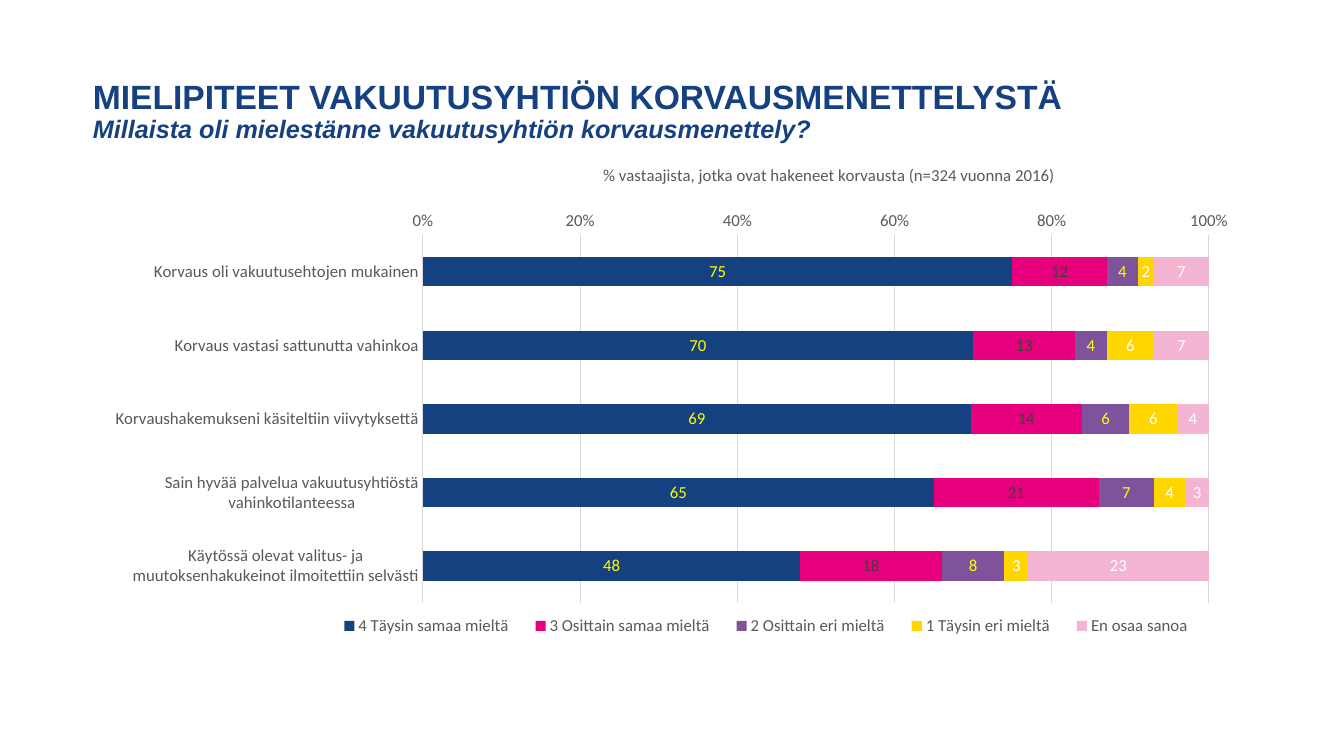
from dataclasses import dataclass

import lxml.etree
import pptx
import pptx.chart.data
import pptx.dml.color
import pptx.enum.chart
import pptx.enum.text
import pptx.oxml.ns
import pptx.util

PX_PER_INCH = 100.8
NAVY, GREY, GRID = "164180", "595959", "D9D9D9"


@dataclass(frozen=True)
class Box:
    left: int
    top: int
    width: int
    height: int

    def emu(self) -> list[pptx.util.Emu]:
        return [px(n) for n in (self.left, self.top, self.width, self.height)]


@dataclass(frozen=True)
class Answer:
    name: str
    shares: tuple[int, ...]
    fill: str
    label: str


@dataclass(frozen=True)
class Heading:
    text: str
    size: int
    italic: bool


HEADINGS = (
    Heading("MIELIPITEET VAKUUTUSYHTIÖN KORVAUSMENETTELYSTÄ", 24, False),
    Heading("Millaista oli mielestänne vakuutusyhtiön korvausmenettely?", 18, True),
)
STATEMENTS = (
    "Korvaus oli vakuutusehtojen mukainen",
    "Korvaus vastasi sattunutta vahinkoa",
    "Korvaushakemukseni käsiteltiin viivytyksettä",
    "Sain hyvää palvelua vakuutusyhtiöstä vahinkotilanteessa",
    "Käytössä olevat valitus- ja muutoksenhakukeinot ilmoitettiin selvästi",
)
ANSWERS = (
    Answer("4 Täysin samaa mieltä", (75, 70, 69, 65, 48), NAVY, "FFFF00"),
    Answer("3 Osittain samaa mieltä", (12, 13, 14, 21, 18), "E6007E", "404040"),
    Answer("2 Osittain eri mieltä", (4, 4, 6, 7, 8), "7F539C", "FFFF00"),
    Answer("1 Täysin eri mieltä", (2, 6, 6, 4, 3), "FFD600", "FFFFFF"),
    Answer("En osaa sanoa", (7, 7, 4, 3, 23), "F4B5D3", "FFFFFF"),
)
CHART_TITLE = "% vastaajista, jotka ovat hakeneet korvausta (n=324 vuonna 2016)"

HEADING_BOX = Box(83, 39, 1159, 147)
CHART_BOX = Box(93, 156, 1159, 492)
TITLE_BOX = Box(600, 161, 465, 26)
PLOT_BOX = Box(423, 235, 786, 368)
LEGEND_BOX = Box(323, 612, 886, 28)


def px(length: int) -> pptx.util.Emu:
    return pptx.util.Inches(length / PX_PER_INCH)


def rgb(value: str) -> pptx.dml.color.RGBColor:
    return pptx.dml.color.RGBColor.from_string(value)


def style_font(font, color: str, size: int = 12, name: str = "Calibri", bold: bool = False) -> None:
    font.name, font.size, font.bold = name, pptx.util.Pt(size), bold
    font.color.rgb = rgb(color)


def style_line(line) -> None:
    line.color.rgb = rgb(GRID)
    line.width = pptx.util.Pt(0.75)


def place(part, index: int, box: Box, sized: bool = True, inner: bool = False) -> None:
    """Give a chart part a manual layout, as shares of the chart's box."""
    qn = pptx.oxml.ns.qn
    for old in part.findall(qn("c:layout")):
        part.remove(old)
    layout = lxml.etree.Element(qn("c:layout"))
    manual = lxml.etree.SubElement(layout, qn("c:manualLayout"))
    settings = {"layoutTarget": "inner"} if inner else {}
    settings |= {
        "xMode": "edge",
        "yMode": "edge",
        "x": (box.left - CHART_BOX.left) / CHART_BOX.width,
        "y": (box.top - CHART_BOX.top) / CHART_BOX.height,
    }
    if sized:
        settings |= {"w": box.width / CHART_BOX.width, "h": box.height / CHART_BOX.height}
    for tag, value in settings.items():
        lxml.etree.SubElement(manual, qn(f"c:{tag}")).set("val", str(value))
    part.insert(index, layout)


def add_heading(slide) -> None:
    frame = slide.shapes.add_textbox(*HEADING_BOX.emu()).text_frame
    frame.word_wrap = True
    frame.vertical_anchor = pptx.enum.text.MSO_ANCHOR.MIDDLE
    paragraph = frame.paragraphs[0]
    paragraph.line_spacing = 0.9
    for number, heading in enumerate(HEADINGS):
        if number:
            paragraph.add_line_break()
        run = paragraph.add_run()
        run.text = heading.text
        style_font(run.font, NAVY, heading.size, "Arial", True)
        run.font.italic = heading.italic


def style_axes(chart) -> None:
    for axis in (chart.category_axis, chart.value_axis):
        axis.major_tick_mark = axis.minor_tick_mark = pptx.enum.chart.XL_TICK_MARK.NONE
        style_font(axis.tick_labels.font, GREY)
    chart.category_axis.reverse_order = True
    style_line(chart.category_axis.format.line)

    shares = chart.value_axis
    shares.minimum_scale, shares.maximum_scale, shares.major_unit = 0, 1, 0.2
    shares.tick_labels.number_format = "0%"
    shares.tick_labels.number_format_is_linked = False
    shares.format.line.fill.background()
    shares.has_major_gridlines = True
    style_line(shares.major_gridlines.format.line)


def style_answers(plot) -> None:
    plot.gap_width, plot.overlap = 150, 100
    plot.vary_by_categories = False
    for series, answer in zip(plot.series, ANSWERS):
        series.format.fill.solid()
        series.format.fill.fore_color.rgb = rgb(answer.fill)
        labels = series.data_labels
        labels.show_value = True
        labels.position = pptx.enum.chart.XL_LABEL_POSITION.CENTER
        style_font(labels.font, answer.label)


def add_opinion_chart(slide) -> None:
    data = pptx.chart.data.CategoryChartData(number_format="0")
    data.categories = STATEMENTS
    for answer in ANSWERS:
        data.add_series(answer.name, answer.shares)
    chart = slide.shapes.add_chart(
        pptx.enum.chart.XL_CHART_TYPE.BAR_STACKED_100, *CHART_BOX.emu(), data
    ).chart
    style_font(chart.font, "000000", 10)

    chart.has_title = True
    title = chart.chart_title
    title.text_frame.text = CHART_TITLE
    style_font(title.text_frame.paragraphs[0].font, GREY)
    title.include_in_layout = False
    place(title._element, 1, TITLE_BOX, sized=False)

    chart.has_legend = True
    chart.legend.position = pptx.enum.chart.XL_LEGEND_POSITION.BOTTOM
    chart.legend.include_in_layout = False
    style_font(chart.legend.font, GREY)
    place(chart.legend._element, 1, LEGEND_BOX)

    style_axes(chart)
    style_answers(chart.plots[0])
    place(chart._chartSpace.chart.plotArea, 0, PLOT_BOX, inner=True)


def main() -> None:
    deck = pptx.Presentation()
    deck.slide_width, deck.slide_height = px(1344), px(756)
    slide = deck.slides.add_slide(deck.slide_layouts[6])
    add_heading(slide)
    add_opinion_chart(slide)
    deck.save("out.pptx")


if __name__ == "__main__":
    main()
